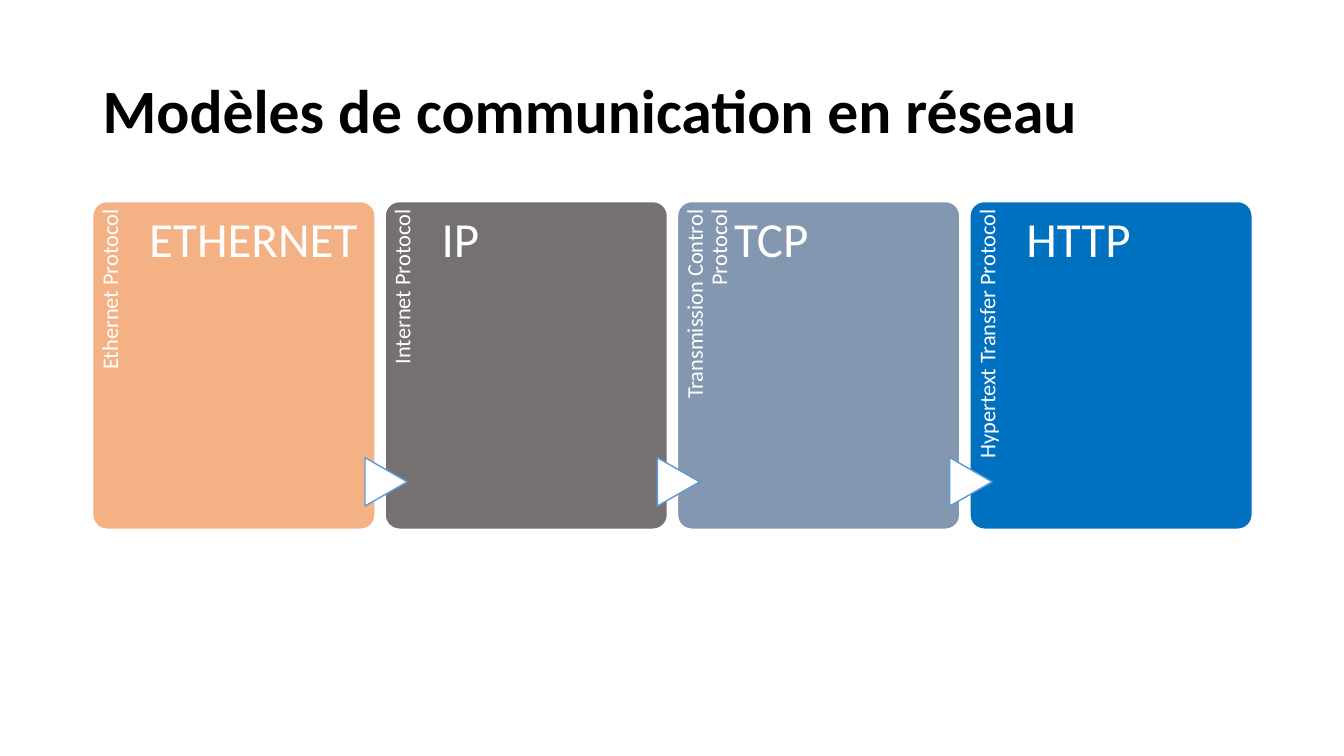
from pptx import Presentation
from pptx.dml.color import RGBColor
from pptx.enum.shapes import MSO_SHAPE
from pptx.enum.text import MSO_ANCHOR, PP_ALIGN
from pptx.util import Inches, Pt

presentation = Presentation()
presentation.slide_width = Inches(13.33)
presentation.slide_height = Inches(7.5)
slide = presentation.slides.add_slide(presentation.slide_layouts[6])

LEFT, TOP = 0.92, 2
CARD_WIDTH, CARD_HEIGHT = 2.8, 3.25
PITCH = 2.9
LABEL_LENGTH, LABEL_DEPTH = 2.66, 0.56
ARROW_WIDTH, ARROW_HEIGHT = 0.48, 0.42


def add_block(kind, box, fill, line):
    shape = slide.shapes.add_shape(kind, *map(Inches, box))
    shape.shadow.inherit = False
    shape.fill.solid()
    shape.fill.fore_color.rgb = RGBColor.from_string(fill)
    shape.line.color.rgb = RGBColor.from_string(line)
    shape.line.width = Pt(1)
    return shape


def add_text(text, box, size, color, frame_format, bold=False, align=PP_ALIGN.LEFT):
    shape = slide.shapes.add_textbox(*map(Inches, box))
    frame = shape.text_frame
    for name, value in {"word_wrap": True, **frame_format}.items():
        setattr(frame, name, value)
    paragraph = frame.paragraphs[0]
    paragraph.text = text
    paragraph.alignment = align
    paragraph.line_spacing = 0.9
    font = paragraph.runs[0].font
    for name, value in {"name": "Calibri", "size": Pt(size), "bold": bold}.items():
        setattr(font, name, value)
    font.color.rgb = RGBColor.from_string(color)
    return shape


label_format = {
    "margin_left": 0,
    "margin_top": Inches(0.06),
    "margin_right": Inches(0.08),
    "margin_bottom": 0,
}
name_format = {**label_format, "margin_top": Inches(0.13), "margin_right": 0}

add_text("Modèles de communication en réseau", (LEFT, 0.4, 11.5, 1.45), 44, "000000",
         {"vertical_anchor": MSO_ANCHOR.MIDDLE}, bold=True)

protocols = [
    ("ETHERNET", "Ethernet Protocol", "F4B183"),
    ("IP", "Internet Protocol", "767171"),
    ("TCP", "Transmission Control Protocol", "8497B0"),
    ("HTTP", "Hypertext Transfer Protocol", "0070C0"),
]

for column, (name, label, color) in enumerate(protocols):
    left = LEFT + column * PITCH
    card = add_block(MSO_SHAPE.ROUNDED_RECTANGLE, (left, TOP, CARD_WIDTH, CARD_HEIGHT),
                     color, "FFFFFF")
    card.adjustments[0] = 0.05

    label_left = left + (LABEL_DEPTH - LABEL_LENGTH) / 2
    label_top = TOP + (LABEL_LENGTH - LABEL_DEPTH) / 2
    label_box = add_text(label, (label_left, label_top, LABEL_LENGTH, LABEL_DEPTH), 16,
                         "FFFFFF", label_format, align=PP_ALIGN.RIGHT)
    label_box.rotation = 270

    if column:
        arrow = add_block(MSO_SHAPE.FLOWCHART_EXTRACT,
                          (left - 0.23, 4.57, ARROW_WIDTH, ARROW_HEIGHT), "FFFFFF", "5B9BD5")
        arrow.rotation = 90

    add_text(name, (left + LABEL_DEPTH, TOP, 2.09, CARD_HEIGHT), 35, "FFFFFF", name_format)

presentation.save("out.pptx")
